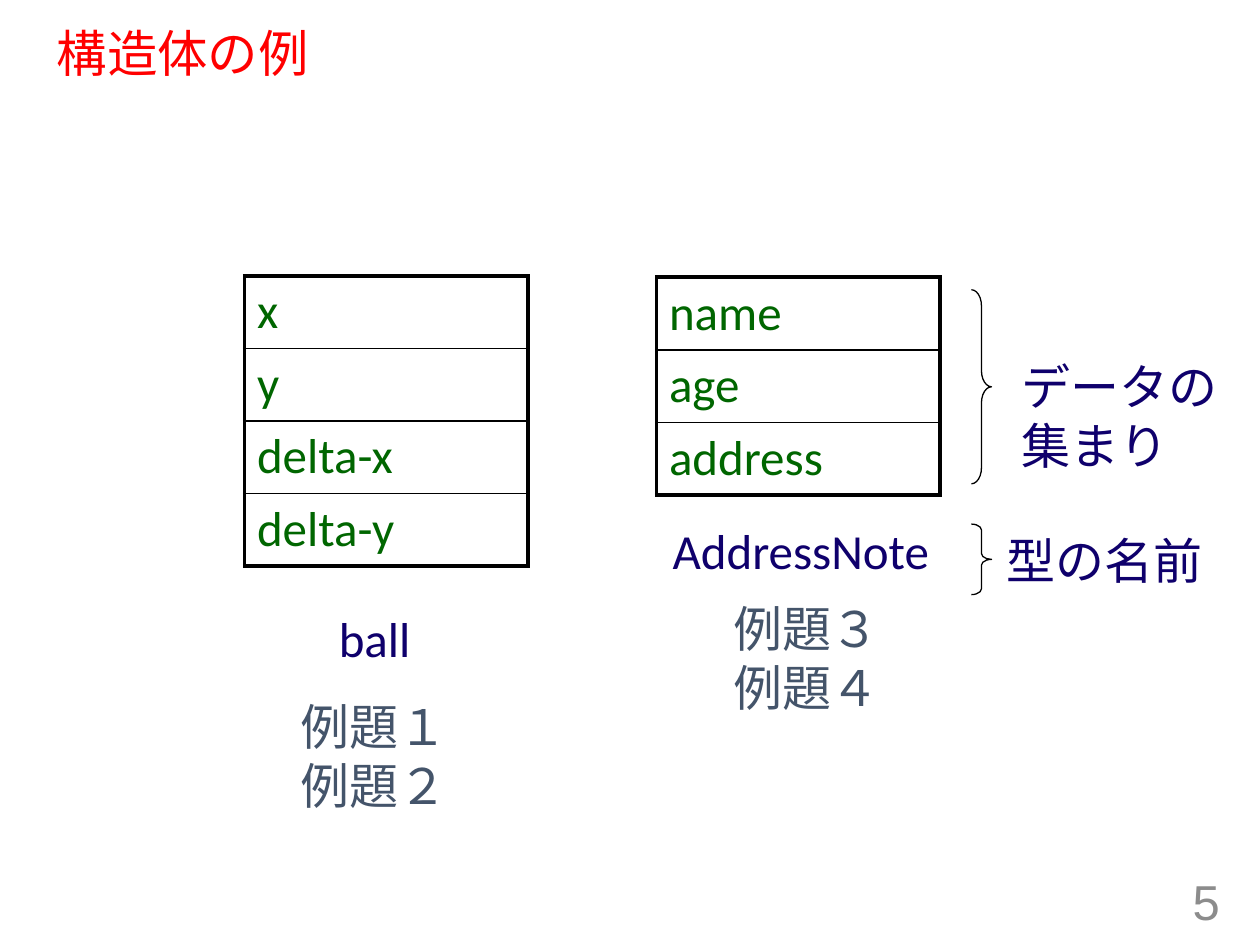
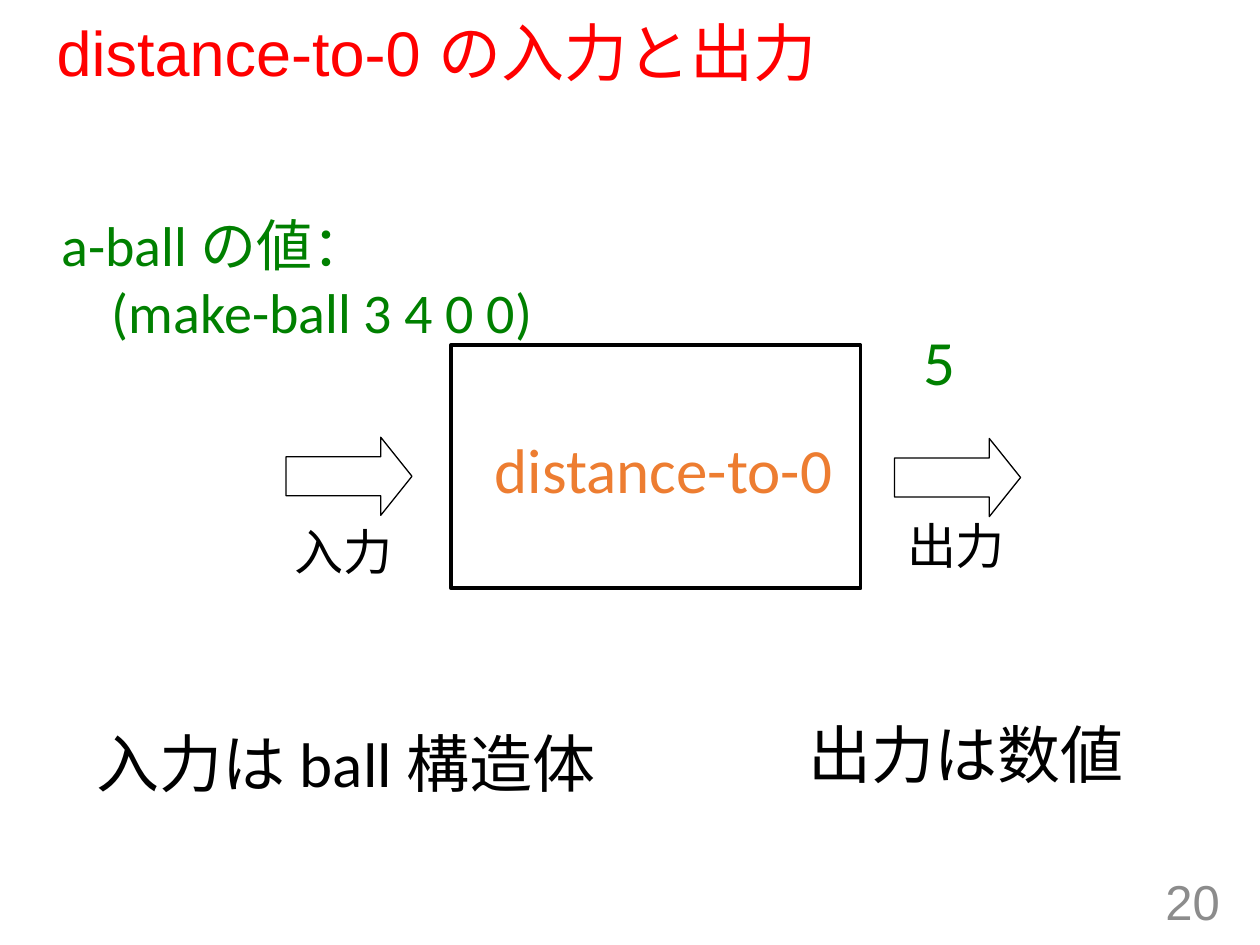
from pptx import Presentation
from pptx.dml.color import RGBColor
from pptx.enum.shapes import MSO_SHAPE
from pptx.enum.text import MSO_ANCHOR, MSO_AUTO_SIZE, PP_ALIGN
from pptx.oxml.ns import qn
from pptx.util import Inches, Pt
from lxml import etree

LEFT, RIGHT = PP_ALIGN.LEFT, PP_ALIGN.RIGHT
TOP, MIDDLE = MSO_ANCHOR.TOP, MSO_ANCHOR.MIDDLE
GROW, FIXED = MSO_AUTO_SIZE.SHAPE_TO_FIT_TEXT, MSO_AUTO_SIZE.NONE
RECT, ARROW, BRACE = MSO_SHAPE.RECTANGLE, MSO_SHAPE.RIGHT_ARROW, MSO_SHAPE.RIGHT_BRACE
TITLE_ONLY = 5

BLACK, RED, GREEN, FIELD_GREEN = "000000", "FF0000", "008000", "006600"
NAVY, SLATE, ORANGE, GREY = "0F006C", "44546A", "ED7D31", "8C8C8C"
BODY_FONT, HEAD_FONT = "Calibri", "Arial"
THICK, MEDIUM, THIN = 2.25, 1, 0.75


def rgb(color):
    return RGBColor.from_string(color)


def inches(*values):
    return [Inches(v) for v in values]


class Deck:
    def __init__(self):
        self.prs = Presentation()
        self.prs.slide_width, self.prs.slide_height = inches(10, 7.5)
        self.s = None

    def slide(self, title, title_size, number):
        self.s = self.prs.slides.add_slide(self.prs.slide_layouts[TITLE_ONLY])
        sp = self.s.shapes.title
        sp.left, sp.top, sp.width, sp.height = inches(0.35, 0.19, 9.25, 0.51)
        tf = sp.text_frame
        tf.auto_size, tf.vertical_anchor = FIXED, MIDDLE
        p = tf.paragraphs[0]
        p.alignment, p.line_spacing = LEFT, 0.9
        self.run(p, title, title_size, RED, HEAD_FONT)
        # Page number
        self.text((7.53, 6.95, 2.25, 0.4), [str(number)], 28, GREY, HEAD_FONT,
                  align=RIGHT, anchor=MIDDLE, wrap=True, fit=FIXED)

    def run(self, p, text, size, color, font=BODY_FONT):
        r = p.add_run()
        r.text = text
        r.font.size, r.font.name = Pt(size), font
        r.font.color.rgb = rgb(color)

    def text(self, box, lines, size, color, font=BODY_FONT, align=LEFT,
             anchor=TOP, wrap=False, fit=GROW, hanging=0):
        """Write lines in a box; hanging indents every line after the first."""
        tf = self.s.shapes.add_textbox(*inches(*box)).text_frame
        tf.word_wrap, tf.auto_size, tf.vertical_anchor = wrap, fit, anchor
        for i, line in enumerate(lines):
            p = tf.add_paragraph() if i else tf.paragraphs[0]
            p.alignment = align
            if i and hanging:
                p._p.get_or_add_pPr().set("marL", str(Inches(hanging)))
            self.run(p, line, size, color, font)

    def outline(self, kind, box, width=THIN, adjust=()):
        sp = self.s.shapes.add_shape(kind, *inches(*box))
        sp.shadow.inherit = False
        sp.fill.background()
        sp.line.color.rgb, sp.line.width = rgb(BLACK), Pt(width)
        for i, value in enumerate(adjust):
            sp.adjustments[i] = value

    def border(self, cell, side, width):
        ln = etree.SubElement(cell._tc.get_or_add_tcPr(), qn(f"a:ln{side}"), w=str(Pt(width)))
        fill = etree.SubElement(ln, qn("a:solidFill"))
        etree.SubElement(fill, qn("a:srgbClr"), val=BLACK)

    def fields(self, left, top, height, names):
        """Draw a structure as a one-column table of field names."""
        box = inches(left, top, 2.25, height)
        table = self.s.shapes.add_table(len(names), 1, *box).table
        table.first_row = table.horz_banding = False
        last = len(names) - 1
        for i, name in enumerate(names):
            cell = table.cell(i, 0)
            widths = {"L": THICK, "R": THICK,
                      "T": MEDIUM if i else THICK,
                      "B": MEDIUM if i < last else THICK}
            for side, width in widths.items():
                self.border(cell, side, width)
            cell.fill.background()
            self.run(cell.text_frame.paragraphs[0], name, 28, FIELD_GREEN)


def structure_slide(deck):
    deck.slide("構造体の例", 28.8, 5)

    # Structures with their names and exercises
    deck.fields(5.21, 2.2, 1.73, ["name", "age", "address"])
    deck.fields(1.94, 2.19, 2.29, ["x", "y", "delta-x", "delta-y"])
    deck.text((5.24, 4.08, 2.26, 0.57), ["AddressNote"], 28, NAVY)
    deck.text((2.59, 4.78, 0.78, 0.57), ["ball"], 28, NAVY)
    deck.text((2.29, 5.48, 1.38, 1.04), ["例題１", "例題２"], 28, SLATE)
    deck.text((5.72, 4.7, 1.38, 1.04), ["例題３", "例題４"], 28, SLATE)

    # Braces and what they mark
    deck.outline(BRACE, (7.71, 4.16, 0.16, 0.56), adjust=(0.29, 0.5))
    deck.text((7.89, 4.16, 1.76, 0.57), ["型の名前"], 28, NAVY)
    deck.outline(BRACE, (7.71, 2.3, 0.16, 1.54), adjust=(0.8, 0.5))
    deck.text((8.01, 2.78, 1.77, 1.04), ["データの", "集まり"], 28, NAVY)


def function_slide(deck):
    deck.slide("distance-to-0 の入力と出力", 36, 20)

    # Function box
    deck.outline(RECT, (3.58, 2.74, 3.25, 1.93), THICK)
    deck.text((3.83, 3.37, 2.9, 0.71), ["distance-to-0"], 36, ORANGE)

    # Input and output arrows
    for left, top in ((2.27, 3.47), (7.1, 3.48)):
        deck.outline(ARROW, (left, top, 1, 0.62), adjust=(0.5, 0.4))
    deck.text((2.24, 4.09, 0.98, 0.57), ["入力"], 28, BLACK)
    deck.text((7.1, 4.04, 0.98, 0.57), ["出力"], 28, BLACK)

    # Sample values
    deck.text((7.23, 2.51, 0.46, 0.71), ["5"], 36, GREEN)
    deck.text((0.39, 1.62, 4.05, 1.17), ["a-ball の値：", "(make-ball 3 4 0 0)"],
              32, GREEN, hanging=0.4)

    # Types of input and output
    deck.text((0.67, 5.7, 4.2, 0.7), ["入力は ball 構造体"], 36, BLACK, wrap=True)
    deck.text((6.32, 5.63, 2.7, 0.7), ["出力は数値"], 36, BLACK)


def main():
    deck = Deck()
    structure_slide(deck)
    function_slide(deck)
    deck.prs.save("out.pptx")


if __name__ == "__main__":
    main()
